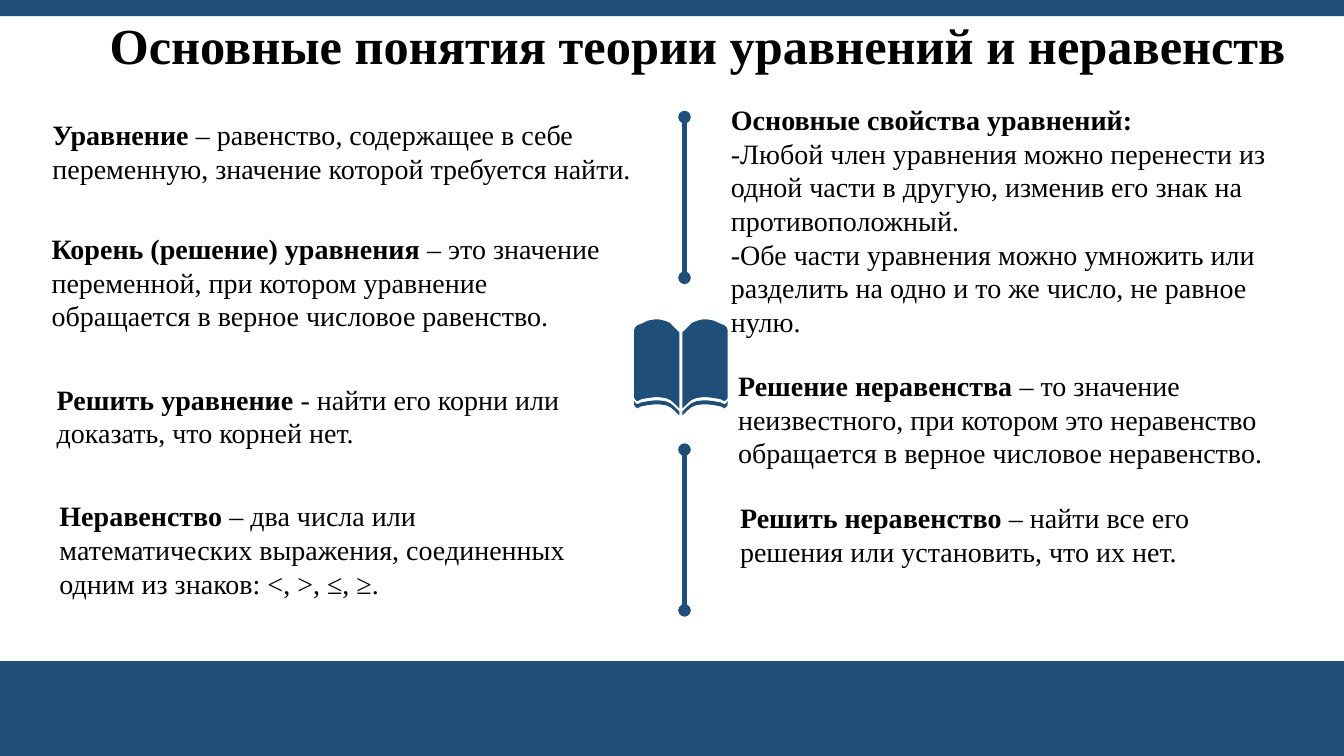
from dataclasses import dataclass
from typing import Optional

import lxml.etree
import pptx
import pptx.dml.color
import pptx.enum.shapes
import pptx.enum.text
import pptx.oxml.ns
import pptx.shapes.autoshape
import pptx.slide
import pptx.text.text
import pptx.util

Cm = pptx.util.Cm
Pt = pptx.util.Pt
RGB = pptx.dml.color.RGBColor
Point = tuple[float, float]


@dataclass(frozen=True)
class Theme:
    blue: RGB = RGB(0x1F, 0x4E, 0x79)
    ink: RGB = RGB(0, 0, 0)
    font: str = "Times New Roman"
    title: float = 36
    body: float = 20
    line: float = 3


@dataclass(frozen=True)
class Box:
    left: float
    top: float
    width: float
    height: float

    def place(self) -> tuple[int, int, int, int]:
        return Cm(self.left), Cm(self.top), Cm(self.width), Cm(self.height)


@dataclass(frozen=True)
class Note:
    box: Box
    term: str
    rest: str = ""
    points: tuple[str, ...] = ()


THEME = Theme()
WIDTH, HEIGHT = 33.87, 19.05
SPINE = 17.16
ROD_X, ROD_LEN = 17.25, 4.05
ROD_TOPS = (2.95, 11.33)
BARS = (Box(0, 16.66, WIDTH, 2.39), Box(0, 0, WIDTH, 0.41))
TITLE_BOX = Box(2.44, 0.53, 30.61, 1.37)
TITLE = "Основные понятия теории уравнений и неравенств "

# Page edges as (distance from the spine, height on the slide)
PAGE_TOP: list[Point] = [
    (1.18, 8.33), (1.16, 8.26), (1.1, 8.2), (0.98, 8.15), (0.83, 8.08), (0.67, 8.05),
    (0.55, 8.05), (0.42, 8.08), (0.29, 8.13), (0.22, 8.2), (0.11, 8.31), (0.04, 8.38),
]
PAGE_FOOT: list[Point] = [
    (0.04, 10.29), (0.17, 10.16), (0.27, 10.08), (0.39, 10.03), (0.55, 10.01), (0.67, 10.01),
    (0.83, 10.03), (1, 10.06), (1.1, 10.11), (1.16, 10.06), (1.18, 10.01),
]

NOTES = (
    Note(Box(1.24, 2.87, 14.88, 3.43), "Уравнение",
         " – равенство, содержащее в себе переменную, значение которой требуется найти."),
    Note(Box(1.22, 5.74, 14.45, 3.53), "Корень (решение) уравнения",
         " – это значение переменной, при котором уравнение обращается в верное числовое равенство."),
    Note(Box(1.35, 9.53, 13.31, 3.43), "Решить уравнение",
         " - найти его корни или доказать, что корней нет."),
    Note(Box(1.42, 12.47, 13.82, 2.77), "Неравенство",
         " – два числа или математических выражения, соединенных одним из знаков: <, >, ≤, ≥."),
    Note(Box(18.34, 2.49, 14.96, 7.72), "Основные свойства уравнений:", points=(
        "-Любой член уравнения можно перенести из одной части в другую, "
        "изменив его знак на противоположный.",
        "-Обе части уравнения можно умножить или разделить на одно и то же число, не равное нулю.",
    )),
    Note(Box(18.52, 9.19, 13.77, 4.29), "Решение неравенства",
         " – то значение неизвестного, при котором это неравенство "
         "обращается в верное числовое неравенство."),
    Note(Box(18.57, 12.52, 13.77, 1.91), "Решить неравенство",
         " – найти все его решения или установить, что их нет."),
)


def paint(shape: pptx.shapes.autoshape.Shape) -> None:
    shape.shadow.inherit = False
    shape.fill.solid()
    shape.fill.fore_color.rgb = THEME.blue
    shape.line.fill.background()


def draw_bar(slide: pptx.slide.Slide, box: Box) -> None:
    paint(slide.shapes.add_shape(pptx.enum.shapes.MSO_SHAPE.RECTANGLE, *box.place()))


def draw_rod(slide: pptx.slide.Slide, top: float) -> None:
    """Draw an upright line with a round dot at each end."""
    rod = slide.shapes.add_connector(
        pptx.enum.shapes.MSO_CONNECTOR.STRAIGHT,
        Cm(ROD_X), Cm(top), Cm(ROD_X), Cm(top + ROD_LEN))
    rod.line.color.rgb = THEME.blue
    rod.line.width = Pt(THEME.line)
    qn = pptx.oxml.ns.qn
    props = rod._element.spPr
    for end in ("a:headEnd", "a:tailEnd"):
        lxml.etree.SubElement(props.find(qn("a:ln")), qn(end), type="oval")
    lxml.etree.SubElement(props, qn("a:effectLst"))


def draw_leaf(slide: pptx.slide.Slide, edge: list[Point], side: int) -> None:
    """Fill an outline on one side of the spine: -1 is left, 1 is right."""
    spots = [(Cm(SPINE + side * gap), Cm(y)) for gap, y in edge]
    form = slide.shapes.build_freeform(*spots[0])
    form.add_line_segments(spots[1:], close=True)
    paint(form.convert_to_shape())


def draw_book(slide: pptx.slide.Slide) -> None:
    upper = [(gap, y + 0.08) for gap, y in PAGE_FOOT]
    lower = [(gap, y + 0.18) for gap, y in reversed(PAGE_FOOT)]
    for edge in (upper + lower, PAGE_TOP + PAGE_FOOT):
        for side in (-1, 1):
            draw_leaf(slide, edge, side)


def style(run: pptx.text.text._Run, size: float, bold: bool) -> None:
    run.font.name = THEME.font
    run.font.size = Pt(size)
    run.font.bold = bold
    run.font.color.rgb = THEME.ink


def add_frame(slide: pptx.slide.Slide, box: Box,
              pads: Optional[Point] = None) -> pptx.text.text.TextFrame:
    frame = slide.shapes.add_textbox(*box.place()).text_frame
    frame.word_wrap = True
    if pads:
        frame.margin_left = frame.margin_right = Cm(pads[0])
        frame.margin_top = frame.margin_bottom = Cm(pads[1])
    return frame


def draw_note(slide: pptx.slide.Slide, note: Note) -> None:
    frame = add_frame(slide, note.box, (0.08, 0.1))
    frame.text = "\n".join((note.term, *note.points))
    head, *points = frame.paragraphs
    style(head.runs[0], THEME.body, True)
    if note.rest:
        rest = head.add_run()
        rest.text = note.rest
        style(rest, THEME.body, False)
    for point in points:
        style(point.runs[0], THEME.body, False)


def draw_title(slide: pptx.slide.Slide) -> None:
    frame = add_frame(slide, TITLE_BOX)
    frame.vertical_anchor = pptx.enum.text.MSO_ANCHOR.MIDDLE
    frame.text = TITLE
    head = frame.paragraphs[0]
    head.alignment = pptx.enum.text.PP_ALIGN.CENTER
    head.line_spacing = 0.9
    head.space_before = Pt(10)
    style(head.runs[0], THEME.title, True)


def main() -> None:
    deck = pptx.Presentation()
    deck.slide_width, deck.slide_height = Cm(WIDTH), Cm(HEIGHT)
    slide = deck.slides.add_slide(deck.slide_layouts[6])
    for top in ROD_TOPS:
        draw_rod(slide, top)
    for note in NOTES:
        draw_note(slide, note)
    draw_book(slide)
    for bar in BARS:
        draw_bar(slide, bar)
    draw_title(slide)
    deck.save("out.pptx")


if __name__ == "__main__":
    main()
